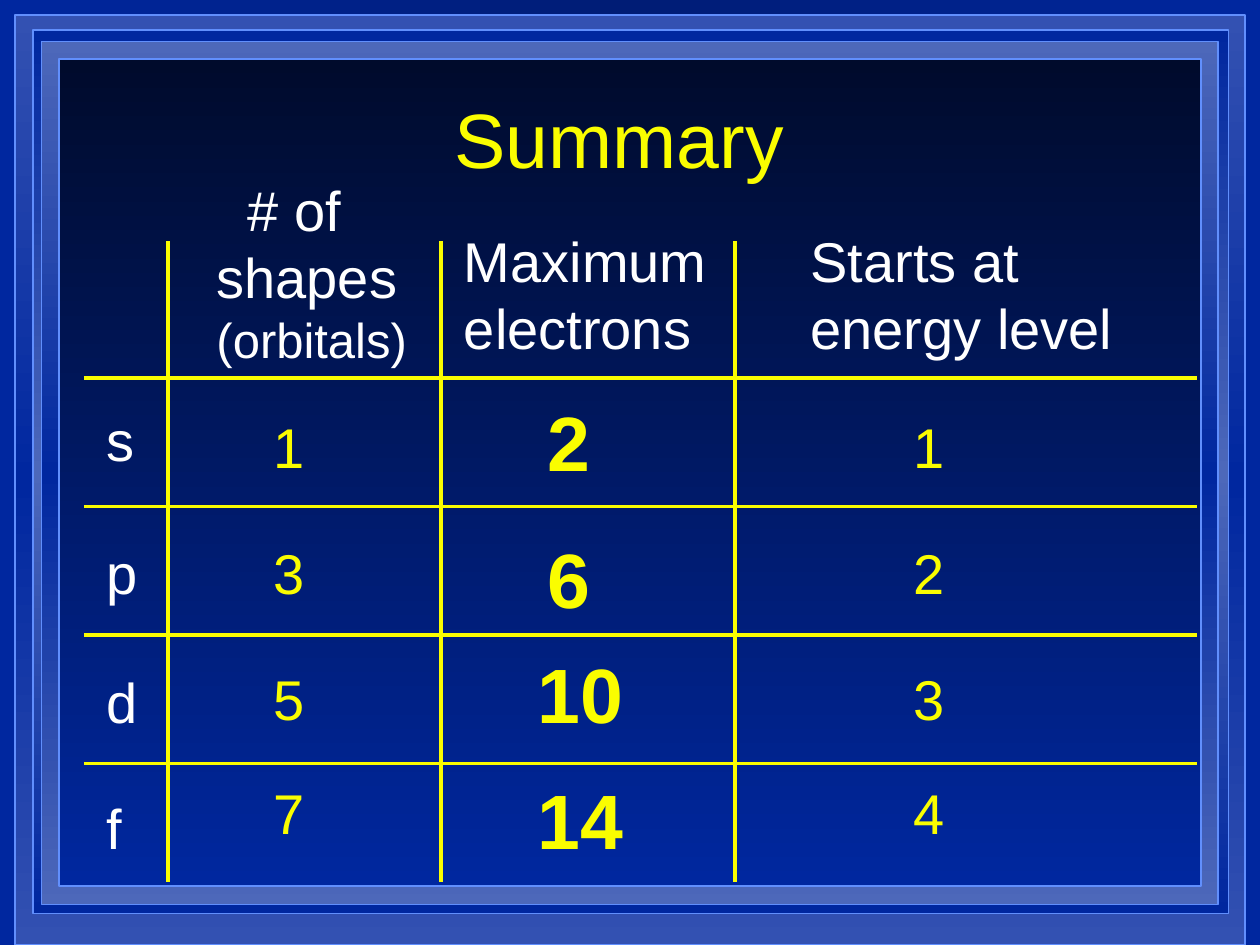
from dataclasses import dataclass

from lxml.etree import SubElement
from pptx import Presentation
from pptx.dml.color import RGBColor
from pptx.enum.shapes import MSO_CONNECTOR, MSO_SHAPE
from pptx.enum.text import MSO_ANCHOR, MSO_AUTO_SIZE, PP_ALIGN
from pptx.oxml.ns import qn
from pptx.util import Pt

FONT = "Arial"
WHITE = RGBColor(0xFF, 0xFF, 0xFF)
YELLOW = RGBColor(0xFA, 0xFD, 0x00)
BLUE = RGBColor(0x00, 0x27, 0x9F)
NAVY = RGBColor(0x00, 0x1C, 0x75)
NIGHT = RGBColor(0x00, 0x0B, 0x2C)
STEEL = RGBColor(0x33, 0x51, 0xB2)
HAZE = RGBColor(0x4D, 0x68, 0xBA)
EDGE = RGBColor(0x61, 0x8F, 0xFD)


@dataclass
class Box:
    left: float
    top: float
    width: float
    height: float

    def points(self) -> tuple:
        return Pt(self.left), Pt(self.top), Pt(self.width), Pt(self.height)


@dataclass
class Frame:
    box: Box
    colors: tuple


@dataclass
class Label:
    text: str
    box: Box
    color: RGBColor = WHITE
    size: float = 32
    bold: bool = False
    wrap: bool = True


@dataclass
class Row:
    name: str
    values: tuple
    name_top: float
    side_top: float
    mid_top: float


FRAMES = [
    Frame(Box(8.64, 8.64, 702.72, 531.36), (STEEL, BLUE, STEEL)),
    Frame(Box(18.72, 17.28, 683.28, 504.72), (BLUE, HAZE, BLUE)),
    Frame(Box(23.76, 23.76, 672.48, 493.2), (HAZE, BLUE, HAZE)),
    Frame(Box(33.84, 33.84, 652.32, 472.32), (NIGHT, BLUE)),
]
HEADS = [
    Label("Maximum electrons", Box(258, 126, 156, 84)),
    Label("Starts at energy level", Box(456, 126, 198, 84)),
]
ROWS = [
    Row("s", ("1", "2", "1"), 228, 232, 222),
    Row("p", ("3", "6", "2"), 304, 304, 300),
    Row("d", ("5", "10", "3"), 378, 376, 366),
    Row("f", ("7", "14", "4"), 450, 441.5, 438),
]
COLUMNS = (96, 252, 420)
LEFT, RIGHT, TOP, BOTTOM = 48, 684, 138, 504
FIRST, STEP = 216, 73.44


def shade(fill, host, colors: tuple, angle: float) -> None:
    fill.gradient()
    fill.gradient_angle = angle
    stops = next(host.iter(qn("a:gsLst")))
    for stop in list(stops):
        stops.remove(stop)
    for i, color in enumerate(colors):
        place = 100000 * i // (len(colors) - 1)
        stop = SubElement(stops, qn("a:gs"), pos=str(place))
        SubElement(stop, qn("a:srgbClr"), val=str(color))


def draw_frame(slide, frame: Frame) -> None:
    shape = slide.shapes.add_shape(MSO_SHAPE.RECTANGLE, *frame.box.points())
    shape.shadow.inherit = False
    shade(shape.fill, shape.element, frame.colors, 270)
    shape.line.color.rgb = EDGE
    shape.line.width = Pt(1)


def draw_line(slide, x1: float, y1: float, x2: float, y2: float) -> None:
    line = slide.shapes.add_connector(
        MSO_CONNECTOR.STRAIGHT, Pt(x1), Pt(y1), Pt(x2), Pt(y2))
    line.line.color.rgb = YELLOW
    line.line.width = Pt(2)
    SubElement(line.element.spPr, qn("a:effectLst"))


def set_font(font, size: float, color: RGBColor, bold: bool = False) -> None:
    font.name = FONT
    font.size = Pt(size)
    font.color.rgb = color
    font.bold = bold


def draw_label(slide, label: Label):
    frame = slide.shapes.add_textbox(*label.box.points()).text_frame
    frame.word_wrap = label.wrap
    frame.auto_size = MSO_AUTO_SIZE.SHAPE_TO_FIT_TEXT
    para = frame.paragraphs[0]
    para.text = label.text
    para.space_before = Pt(0)
    space = next(para._p.iter(qn("a:spcBef")))
    space.remove(space[0])
    SubElement(space, qn("a:spcPct"), val="50000")
    set_font(para.font, label.size, label.color, label.bold)
    return para


def draw_shapes_head(slide) -> None:
    para = draw_label(slide, Label("# of shapes ", Box(116.64, 96.48, 131.76, 117.36)))
    para._p.get_or_add_pPr().set("indent", str(Pt(17.8)))
    note = para.add_run()
    note.text = "(orbitals)"
    note.font.size = Pt(28)


def draw_row(slide, row: Row) -> None:
    count, most, level = row.values
    left, width = (306, 38.88) if len(most) == 1 else (300, 63.36)
    draw_label(slide, Label(row.name, Box(54, row.name_top, 32, 45.36)))
    for text, x in ((count, 149.04), (level, 514.8)):
        box = Box(x, row.side_top, 32.4, 45.36)
        draw_label(slide, Label(text, box, YELLOW, wrap=False))
    box = Box(left, row.mid_top, width, 59.76)
    draw_label(slide, Label(most, box, YELLOW, 44, True, False))


def draw_title(slide) -> None:
    title = slide.shapes.title
    title.left, title.top, title.width, title.height = Box(48, 48.96, 612, 59.76).points()
    frame = title.text_frame
    frame.text = "Summary"
    frame.vertical_anchor = MSO_ANCHOR.BOTTOM
    frame.auto_size = MSO_AUTO_SIZE.NONE
    para = frame.paragraphs[0]
    para.alignment = PP_ALIGN.CENTER
    set_font(para.font, 44, YELLOW)
    title.element.getparent().append(title.element)


def main() -> None:
    deck = Presentation()
    deck.slide_width, deck.slide_height = Pt(720), Pt(540)
    slide = deck.slides.add_slide(deck.slide_layouts[5])
    shade(slide.background.fill, slide.element, (BLUE, NAVY, BLUE), 0)
    for frame in FRAMES:
        draw_frame(slide, frame)
    draw_title(slide)
    draw_shapes_head(slide)
    for head in HEADS:
        draw_label(slide, head)
    for x in COLUMNS:
        draw_line(slide, x, TOP, x, BOTTOM)
    for i, row in enumerate(ROWS):
        y = FIRST + i * STEP
        draw_line(slide, LEFT, y, RIGHT, y)
        draw_row(slide, row)
    deck.save("out.pptx")


if __name__ == "__main__":
    main()
